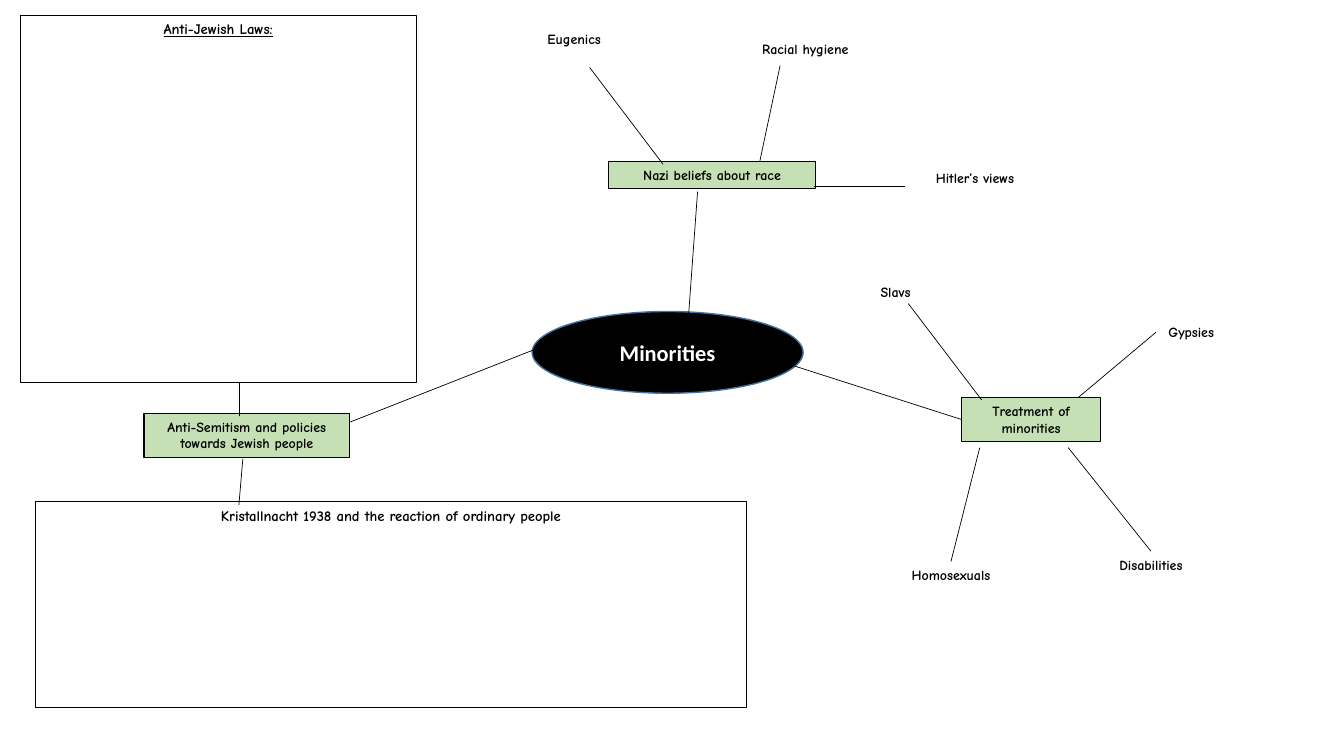
from dataclasses import dataclass
from typing import Optional

import pptx
import pptx.dml.color
import pptx.enum.shapes
import pptx.enum.text
import pptx.oxml
import pptx.oxml.ns
import pptx.shapes.autoshape
import pptx.shapes.connector
import pptx.slide
import pptx.text.text
import pptx.util

Cm = pptx.util.Cm
RGBColor = pptx.dml.color.RGBColor
Geometry = pptx.enum.shapes.MSO_SHAPE
Anchor = pptx.enum.text.MSO_ANCHOR

BLACK = RGBColor(0x00, 0x00, 0x00)
WHITE = RGBColor(0xFF, 0xFF, 0xFF)
GREEN = RGBColor(0xC5, 0xE0, 0xB4)
BLUE = RGBColor(0x43, 0x73, 0x9E)

LABEL_HEIGHT = 0.69
TOP, LEFT = 0, 1


@dataclass(frozen=True)
class Box:
    text: str
    left: float
    top: float
    width: float
    height: float
    fill: Optional[RGBColor] = None
    size: float = 10
    underline: bool = False
    geometry: Geometry = Geometry.RECTANGLE
    font: str = "Comic Neue"
    color: RGBColor = BLACK
    border: RGBColor = BLACK
    border_width: float = 0.75
    anchor: Anchor = Anchor.TOP


@dataclass(frozen=True)
class Label:
    text: str
    left: float
    top: float
    width: float


@dataclass(frozen=True)
class Link:
    start: tuple[float, float]
    end: tuple[float, float]
    target: Optional[str] = None  # text of the joined shape
    side: int = TOP


BOXES = [
    Box("Minorities", 13.41, 7.85, 6.83, 2.06, BLACK, size=16,
        geometry=Geometry.OVAL, font="Calibri", color=WHITE,
        border=BLUE, border_width=1, anchor=Anchor.MIDDLE),
    Box("Nazi beliefs about race", 15.34, 4.06, 5.21, 0.69, GREEN),
    Box("Treatment of minorities", 24.23, 10.01, 3.51, 1.12, GREEN),
    Box("Anti-Semitism and policies towards Jewish people",
        3.63, 10.41, 5.18, 1.12, GREEN),
    Box("Kristallnacht 1938 and the reaction of ordinary people",
        0.89, 12.65, 17.93, 5.18, size=10.5),
    Box("Anti-Jewish Laws:", 0.51, 0.38, 9.98, 9.25, size=10.5, underline=True),
]

LABELS = [
    Label("Eugenics", 13.49, 0.64, 1.96),
    Label("Racial hygiene", 18.82, 0.89, 2.95),
    Label("Hitler’s views", 23.16, 4.14, 2.82),
    Label("Slavs", 21.87, 7.01, 1.4),
    Label("Gypsies", 29.13, 8.03, 1.78),
    Label("Homosexuals", 22.63, 14.15, 2.67),
    Label("Disabilities", 27.81, 13.89, 2.39),
]

LINKS = [
    # From the centre to the three themes
    Link((17.35, 7.98), (17.58, 4.83)),
    Link((19.23, 8.97), (24.23, 10.57), "Treatment of minorities", LEFT),
    Link((13.77, 8.69), (8.81, 10.64)),
    # Beliefs about race
    Link((16.71, 4.14), (14.86, 1.7)),
    Link((19.15, 4.06), (19.66, 1.65)),
    Link((20.52, 4.7), (22.81, 4.7)),
    # Treatment of minorities
    Link((24.74, 10.08), (22.89, 7.65)),
    Link((27.18, 10.01), (29.13, 8.38), "Gypsies", LEFT),
    Link((24.69, 11.28), (23.98, 14.15), "Homosexuals", TOP),
    Link((26.92, 11.28), (29.01, 13.89), "Disabilities", TOP),
    # Anti-Semitism and policies
    Link((6.02, 10.49), (6.02, 9.65)),
    Link((6.12, 11.56), (6.02, 12.73)),
]


def write_text(frame: pptx.text.text.TextFrame, text: str, size: float,
               font: str = "Comic Neue", color: RGBColor = BLACK,
               underline: bool = False) -> None:
    paragraph = frame.paragraphs[0]
    paragraph.text = text
    paragraph.alignment = pptx.enum.text.PP_ALIGN.CENTER
    paragraph.font.name = font
    paragraph.font.size = pptx.util.Pt(size)
    paragraph.font.bold = True
    paragraph.font.color.rgb = color
    if underline:
        paragraph.font.underline = True


def draw_box(slide: pptx.slide.Slide, box: Box) -> pptx.shapes.autoshape.Shape:
    shape = slide.shapes.add_shape(box.geometry, Cm(box.left), Cm(box.top),
                                   Cm(box.width), Cm(box.height))
    shape.shadow.inherit = False
    if box.fill is None:
        shape.fill.background()
    else:
        shape.fill.solid()
        shape.fill.fore_color.rgb = box.fill
    shape.line.color.rgb = box.border
    shape.line.width = pptx.util.Pt(box.border_width)
    shape.text_frame.word_wrap = True
    shape.text_frame.vertical_anchor = box.anchor
    write_text(shape.text_frame, box.text, box.size, box.font, box.color,
               box.underline)
    return shape


def draw_label(slide: pptx.slide.Slide,
               label: Label) -> pptx.shapes.autoshape.Shape:
    shape = slide.shapes.add_textbox(Cm(label.left), Cm(label.top),
                                     Cm(label.width), Cm(LABEL_HEIGHT))
    shape.text_frame.word_wrap = False
    write_text(shape.text_frame, label.text, 10)
    return shape


def draw_link(slide: pptx.slide.Slide, link: Link,
              shapes: dict[str, pptx.shapes.autoshape.Shape]) -> None:
    connector = slide.shapes.add_connector(
        pptx.enum.shapes.MSO_CONNECTOR.STRAIGHT,
        *(Cm(value) for value in link.start + link.end))
    connector.line.color.rgb = BLACK
    connector.line.width = pptx.util.Pt(0.5)
    properties = connector._element.spPr
    properties.append(pptx.oxml.parse_xml(
        f"<a:effectLst {pptx.oxml.ns.nsdecls('a')}/>"))
    if link.target:
        connector.end_connect(shapes[link.target], link.side)


def main() -> None:
    presentation = pptx.Presentation()
    presentation.slide_width = Cm(33.87)
    presentation.slide_height = Cm(19.05)
    slide = presentation.slides.add_slide(presentation.slide_layouts[6])

    # Boxes and labels, found again by their text
    shapes = {box.text: draw_box(slide, box) for box in BOXES}
    shapes |= {label.text: draw_label(slide, label) for label in LABELS}

    # Lines of the mind map
    for link in LINKS:
        draw_link(slide, link, shapes)

    presentation.save("out.pptx")


if __name__ == "__main__":
    main()
